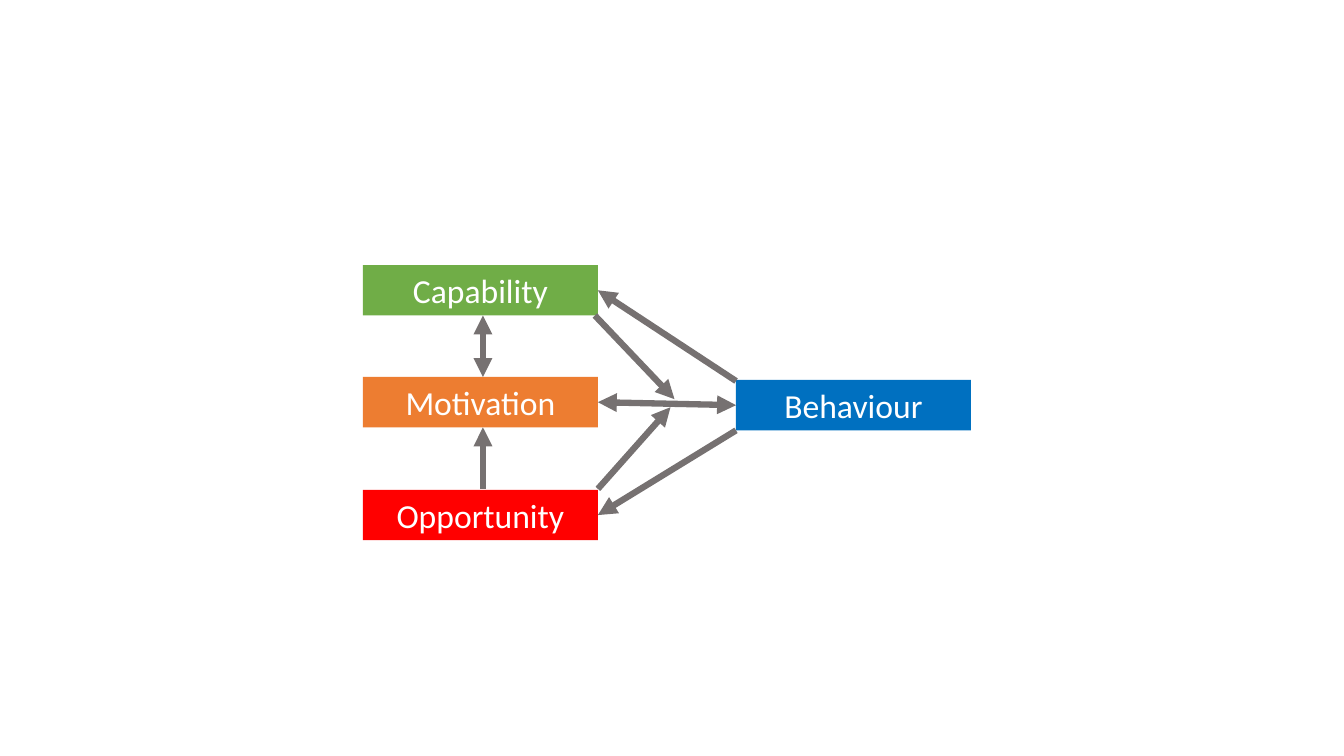
from dataclasses import dataclass
from enum import IntEnum
from typing import Union

from lxml.etree import SubElement
from pptx import Presentation
from pptx.dml.color import RGBColor
from pptx.enum.shapes import MSO_CONNECTOR as Connector, MSO_SHAPE as Preset
from pptx.enum.text import MSO_ANCHOR as Anchor, MSO_AUTO_SIZE as AutoSize, PP_ALIGN as Align
from pptx.oxml.ns import qn
from pptx.shapes.autoshape import Shape
from pptx.slide import Slide
from pptx.util import Inches, Pt


@dataclass(frozen=True)
class Theme:
    green: str = "70AD47"
    orange: str = "ED7D31"
    red: str = "FF0000"
    blue: str = "0070C0"
    arrow: str = "767171"
    text: str = "FFFFFF"
    font: str = "Calibri"
    text_size: float = 24
    arrow_width: float = 4.5


class Side(IntEnum):
    LEFT = 1
    RIGHT = 3


@dataclass(frozen=True)
class Box:
    label: str
    left: float
    top: float
    color: str


@dataclass(frozen=True)
class Joint:
    label: str
    side: Side


@dataclass(frozen=True)
class Point:
    x: float
    y: float


End = Union[Joint, Point]


@dataclass(frozen=True)
class Arrow:
    start: End
    end: End
    two_way: bool = False


THEME = Theme()
BOX_WIDTH, BOX_HEIGHT = 2.33, 0.5
SOURCE_LEFT, SOURCE_TOPS = 3.6, (2.63, 3.74, 4.86)
BEHAVIOUR_LEFT, BEHAVIOUR_TOP = 7.3, 3.77
SOURCE_RIGHT = SOURCE_LEFT + BOX_WIDTH
VERTICAL_X = 4.79

BOXES = [
    Box("Capability", SOURCE_LEFT, SOURCE_TOPS[0], THEME.green),
    Box("Motivation", SOURCE_LEFT, SOURCE_TOPS[1], THEME.orange),
    Box("Opportunity", SOURCE_LEFT, SOURCE_TOPS[2], THEME.red),
    Box("Behaviour", BEHAVIOUR_LEFT, BEHAVIOUR_TOP, THEME.blue),
]

ARROWS = [
    Arrow(Point(VERTICAL_X, 3.13), Point(VERTICAL_X, 3.74), two_way=True),
    Arrow(Point(SOURCE_RIGHT, 4.85), Point(6.65, 4.04)),
    Arrow(Point(5.9, 3.13), Point(6.69, 3.96)),
    Arrow(Point(BEHAVIOUR_LEFT, 3.78), Joint("Capability", Side.RIGHT)),
    Arrow(Point(BEHAVIOUR_LEFT, 4.27), Joint("Opportunity", Side.RIGHT)),
    Arrow(Joint("Motivation", Side.RIGHT), Joint("Behaviour", Side.LEFT), two_way=True),
    Arrow(Point(VERTICAL_X, 4.85), Point(VERTICAL_X, 4.24)),
]


def apply_format(target: object, values: dict) -> None:
    for name, value in values.items():
        setattr(target, name, value)


def draw_box(slide: Slide, box: Box) -> Shape:
    shape = slide.shapes.add_shape(
        Preset.RECTANGLE, Inches(box.left), Inches(box.top), Inches(BOX_WIDTH), Inches(BOX_HEIGHT)
    )
    shape.shadow.inherit = False
    shape.fill.solid()
    shape.fill.fore_color.rgb = RGBColor.from_string(box.color)
    shape.line.fill.background()
    apply_format(shape.text_frame, {
        "word_wrap": True,
        "auto_size": AutoSize.SHAPE_TO_FIT_TEXT,
        "vertical_anchor": Anchor.MIDDLE,
    })
    paragraph = shape.text_frame.paragraphs[0]
    paragraph.alignment = Align.CENTER
    run = paragraph.add_run()
    run.text = box.label
    apply_format(run.font, {"name": THEME.font, "size": Pt(THEME.text_size)})
    run.font.color.rgb = RGBColor.from_string(THEME.text)
    return shape


def position(end: End, shapes: dict[str, Shape]) -> tuple[int, int]:
    if isinstance(end, Point):
        return Inches(end.x), Inches(end.y)
    shape = shapes[end.label]
    x = shape.left if end.side is Side.LEFT else shape.left + shape.width
    return x, shape.top + shape.height // 2


def draw_arrow(slide: Slide, arrow: Arrow, shapes: dict[str, Shape]) -> None:
    connector = slide.shapes.add_connector(
        Connector.STRAIGHT, *position(arrow.start, shapes), *position(arrow.end, shapes)
    )
    for end, connect in ((arrow.start, connector.begin_connect), (arrow.end, connector.end_connect)):
        if isinstance(end, Joint):
            connect(shapes[end.label], int(end.side))
    connector.line.width = Pt(THEME.arrow_width)
    connector.line.color.rgb = RGBColor.from_string(THEME.arrow)
    properties = connector.element.spPr
    outline = properties.find(qn("a:ln"))
    for tag in ("a:headEnd", "a:tailEnd") if arrow.two_way else ("a:tailEnd",):
        SubElement(outline, qn(tag), type="triangle")
    SubElement(properties, qn("a:effectLst"))


def main() -> None:
    presentation = Presentation()
    apply_format(presentation, {"slide_width": Inches(13.33), "slide_height": Inches(7.5)})
    slide = presentation.slides.add_slide(presentation.slide_layouts[6])
    shapes = {box.label: draw_box(slide, box) for box in BOXES}
    for arrow in ARROWS:
        draw_arrow(slide, arrow, shapes)
    presentation.save("out.pptx")


if __name__ == "__main__":
    main()
